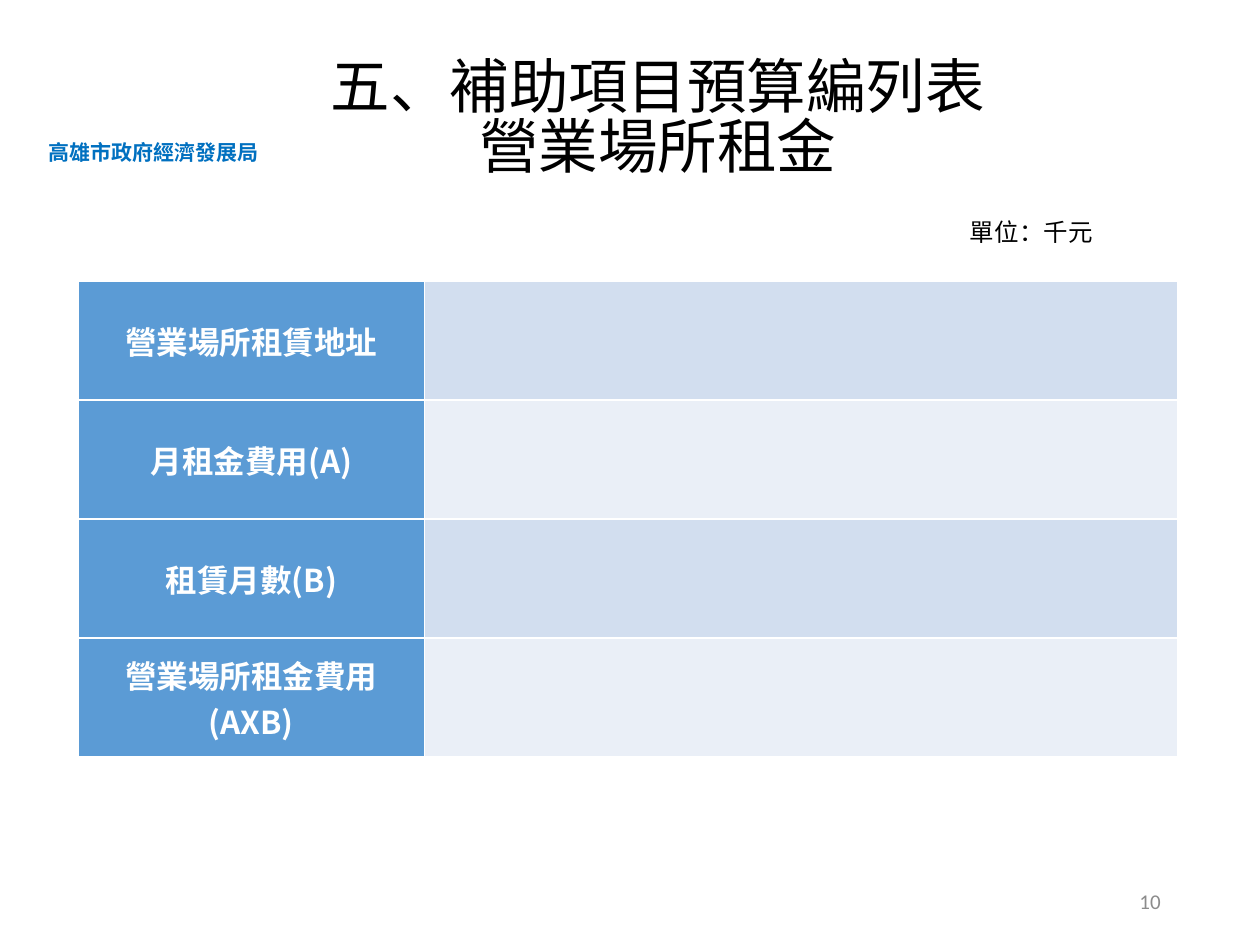
from lxml.etree import SubElement
from pptx import Presentation
from pptx.dml.color import RGBColor
from pptx.enum.text import MSO_ANCHOR, PP_ALIGN
from pptx.oxml.ns import qn
from pptx.util import Inches, Pt


def rgb(value):
    return RGBColor.from_string(value)


class SlideBuilder:
    """Draws styled text and tables on the current slide."""

    cjk = "Noto Sans CJK SC"
    header = "5B9BD5"
    bands = ("D2DEEF", "EAEFF7")

    def __init__(self, slide):
        self.s = slide

    def style(self, p, size, color, bold=False, align=PP_ALIGN.LEFT, font=cjk):
        p.alignment = align
        p.font.size = Pt(size)
        p.font.bold = bold
        p.font.color.rgb = rgb(color)
        p.font.name = font
        SubElement(p._p.pPr.find(qn("a:defRPr")), qn("a:ea"), typeface=font)

    def text(self, lines, left, top, width, height, size, color="000000",
             wrap=True, anchor=MSO_ANCHOR.TOP, spacing=None, **style):
        box = self.s.shapes.add_textbox(
            Inches(left), Inches(top), Inches(width), Inches(height))
        tf = box.text_frame
        tf.word_wrap = wrap
        tf.vertical_anchor = anchor
        tf.text = "\n".join(lines)
        for p in tf.paragraphs:
            self.style(p, size, color, **style)
            if spacing:
                p.line_spacing = spacing

    def table(self, labels, left, top, widths, row_height):
        frame = self.s.shapes.add_table(
            len(labels), len(widths), Inches(left), Inches(top),
            Inches(sum(widths)), Inches(row_height * len(labels)))
        table = frame.table
        table.first_row = False
        for column, width in zip(table.columns, widths):
            column.width = Inches(width)
        for i, label in enumerate(labels):
            name, value = table.rows[i].cells
            name.text = label
            name.vertical_anchor = MSO_ANCHOR.MIDDLE
            self.style(name.text_frame.paragraphs[0], 18, "FFFFFF",
                       bold=True, align=PP_ALIGN.CENTER)
            for cell, color in ((name, self.header), (value, self.bands[i % 2])):
                cell.fill.solid()
                cell.fill.fore_color.rgb = rgb(color)


def main():
    prs = Presentation()
    prs.slide_width, prs.slide_height = Inches(10), Inches(7.5)
    b = SlideBuilder(prs.slides.add_slide(prs.slide_layouts[6]))
    b.text(["高雄市政府經濟發展局"], 0.29, 1.06, 1.88, 0.3, 12, "0070C0",
           wrap=False, bold=True)
    b.table(["營業場所租賃地址", "月租金費用(A)", "租賃月數(B)",
             "營業場所租金費用(AXB)"], 0.62, 2.23, (2.75, 5.98), 0.945)
    b.text(["五、補助項目預算編列表", "營業場所租金"], 0.72, 0.45, 9, 1.01, 34,
           anchor=MSO_ANCHOR.MIDDLE, spacing=0.84, align=PP_ALIGN.CENTER)
    b.text(["單位：千元"], 7.6, 1.67, 2, 0.34, 14)
    b.text(["10"], 7.06, 6.95, 2.25, 0.4, 12, "8C8C8C",
           anchor=MSO_ANCHOR.MIDDLE, align=PP_ALIGN.RIGHT, font="Calibri")
    prs.save("out.pptx")


if __name__ == "__main__":
    main()
